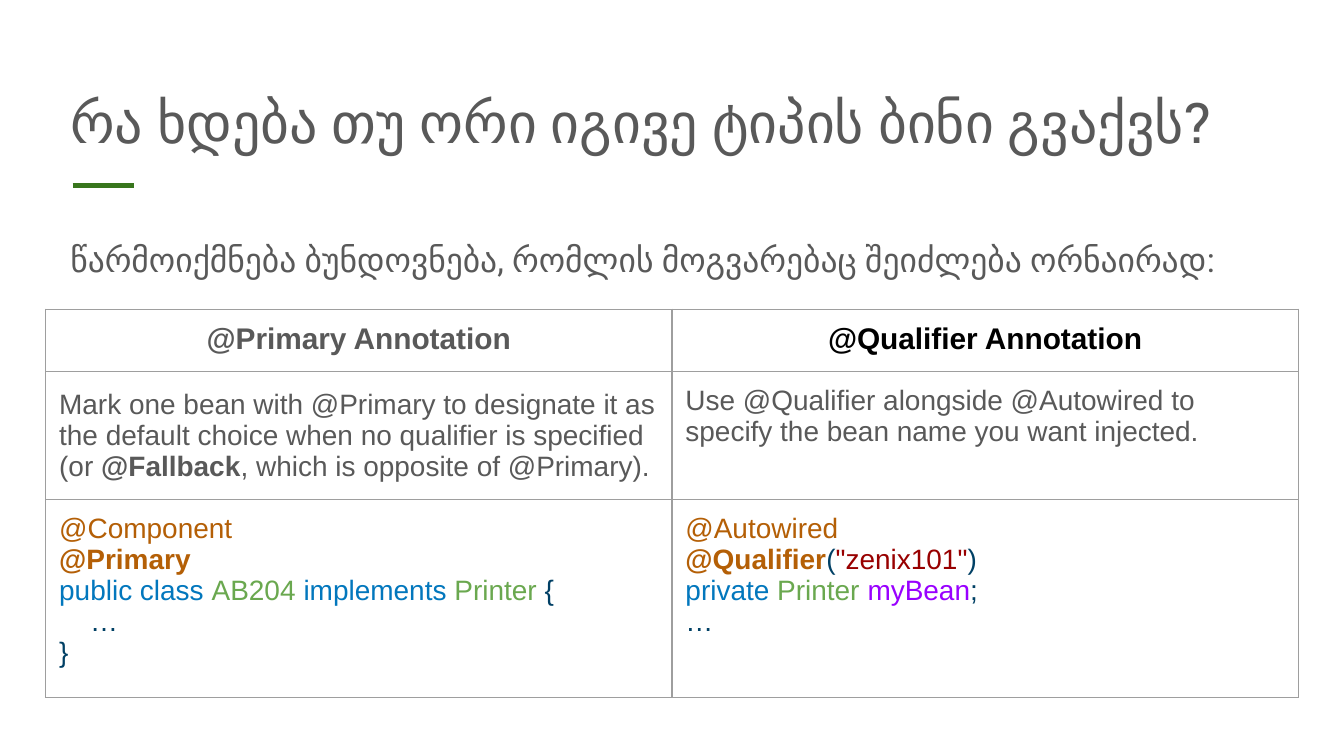
"""Builds a slide comparing two ways to resolve ambiguous beans."""
from lxml.etree import SubElement
from pptx import Presentation
from pptx.dml.color import RGBColor
from pptx.enum.shapes import MSO_CONNECTOR
from pptx.enum.text import MSO_ANCHOR, PP_ALIGN
from pptx.oxml.ns import qn
from pptx.util import Inches, Pt

GRAY = RGBColor(0x59, 0x59, 0x59)
BLACK = RGBColor(0, 0, 0)
GREEN = RGBColor(0x38, 0x76, 0x1D)
RULE = RGBColor(0x9E, 0x9E, 0x9E)
NOTE = RGBColor(0xB4, 0x5F, 0x06)
WORD = RGBColor(0x02, 0x77, 0xBD)
KIND = RGBColor(0x6A, 0xA8, 0x4F)
MARK = RGBColor(0x00, 0x40, 0x65)
QUOTE = RGBColor(0x98, 0, 0)
FIELD = RGBColor(0x99, 0, 0xFF)

WIDE = 10
HIGH = WIDE * 9 / 16
SPAN = 9.15
LEFT = (WIDE - SPAN) / 2
PAD = Inches(0.1)
TITLE = "რა ხდება თუ ორი იგივე ტიპის ბინი გვაქვს?"
LEAD = "წარმოიქმნება ბუნდოვნება, რომლის მოგვარებაც შეიძლება ორნაირად:"

HEADS = [
    [[("@Primary Annotation", GRAY, True)]],
    [[("@Qualifier Annotation", BLACK, True)]],
]
NOTES = [
    [
        [("Mark one bean with @Primary to designate it as the default choice "
          "when no qualifier is specified", GRAY)],
        [("(or ", GRAY), ("@Fallback", GRAY, True),
         (", which is opposite of @Primary).", GRAY)],
    ],
    [[("Use @Qualifier alongside @Autowired to specify the bean name "
       "you want injected.", GRAY)]],
]
CODES = [
    [
        [("@Component", NOTE)],
        [("@Primary", NOTE, True)],
        [("public class ", WORD), ("AB204 ", KIND), ("implements ", WORD),
         ("Printer ", KIND), ("{", MARK)],
        [("…", MARK)],
        [("}", MARK)],
    ],
    [
        [("@Autowired", NOTE)],
        [("@Qualifier", NOTE, True), ("(", MARK), ('"zenix101"', QUOTE),
         (")", MARK)],
        [("private ", WORD), ("Printer ", KIND), ("myBean", FIELD),
         (";", MARK)],
        [("…", MARK)],
    ],
]
ROWS = [(0.37, HEADS, 16, PP_ALIGN.CENTER),
        (0.64, NOTES, 15, PP_ALIGN.LEFT),
        (1.47, CODES, 15, PP_ALIGN.LEFT)]
INDENTS = {(2, 0): {3: 0.23}}


def write(frame, text, size, font="Arial", align=PP_ALIGN.LEFT,
          space=None, after=0, indents=None):
    """Fill a text frame with paragraphs of (words, colour, bold) runs."""
    frame.word_wrap = True
    for i, line in enumerate(text):
        para = frame.paragraphs[0] if i == 0 else frame.add_paragraph()
        para.alignment = align
        para.space_after = Pt(after)
        if space:
            para.line_spacing = space
        if indents and i in indents:
            para._p.get_or_add_pPr().set("marL", str(Inches(indents[i])))
        for words, color, *bold in line:
            run = para.add_run()
            run.text = words
            run.font.name = font
            run.font.size = Pt(size)
            run.font.bold = bool(bold)
            run.font.color.rgb = color


def pad(part):
    """Give a cell or text frame equal margins."""
    part.margin_left = part.margin_right = PAD
    part.margin_top = part.margin_bottom = PAD


def border(cell):
    """Draw a thin rule on every side of a cell."""
    props = cell._tc.get_or_add_tcPr()
    for i, side in enumerate(("lnL", "lnR", "lnT", "lnB")):
        line = props.makeelement(qn(f"a:{side}"), {"w": str(Pt(0.75))})
        fill = SubElement(line, qn("a:solidFill"))
        SubElement(fill, qn("a:srgbClr"), val=str(RULE))
        props.insert(i, line)


def box(slide, top, high, text, anchor, **style):
    """Add a text box across the content width."""
    area = slide.shapes.add_textbox(
        Inches(LEFT), Inches(top), Inches(SPAN), Inches(high))
    pad(area.text_frame)
    area.text_frame.vertical_anchor = anchor
    write(area.text_frame, [[(text, GRAY)]], **style)


def grid(slide):
    """Add the comparison table."""
    left = 0.034 * WIDE
    wide = WIDE - 2 * left
    high = sum(row[0] for row in ROWS)
    table = slide.shapes.add_table(
        len(ROWS), len(HEADS), Inches(left), Inches(2.3),
        Inches(wide), Inches(high)).table
    table.first_row = table.horz_banding = False
    for col in table.columns:
        col.width = Inches(wide / len(HEADS))
    for r, (tall, texts, size, align) in enumerate(ROWS):
        table.rows[r].height = Inches(tall)
        for c, text in enumerate(texts):
            cell = table.cell(r, c)
            cell.fill.background()
            pad(cell)
            border(cell)
            write(cell.text_frame, text, size, align=align,
                  indents=INDENTS.get((r, c)))
    table.cell(1, 0).vertical_anchor = MSO_ANCHOR.MIDDLE


def main():
    """Build and save the slide."""
    deck = Presentation()
    deck.slide_width, deck.slide_height = Inches(WIDE), Inches(HIGH)
    slide = deck.slides.add_slide(deck.slide_layouts[6])
    dash = slide.shapes.add_connector(
        MSO_CONNECTOR.STRAIGHT, Inches(0.54), Inches(1.38),
        Inches(1), Inches(1.38))
    dash.line.color.rgb = GREEN
    dash.line.width = Pt(3)
    SubElement(dash._element.spPr, qn("a:effectLst"))
    box(slide, 0.5, 0.75, TITLE, MSO_ANCHOR.BOTTOM,
        size=30, font="Roboto Slab")
    box(slide, 1.63, 3.37, LEAD, MSO_ANCHOR.TOP,
        size=18, font="Roboto", space=1.15, after=12)
    grid(slide)
    deck.save("out.pptx")


if __name__ == "__main__":
    main()
